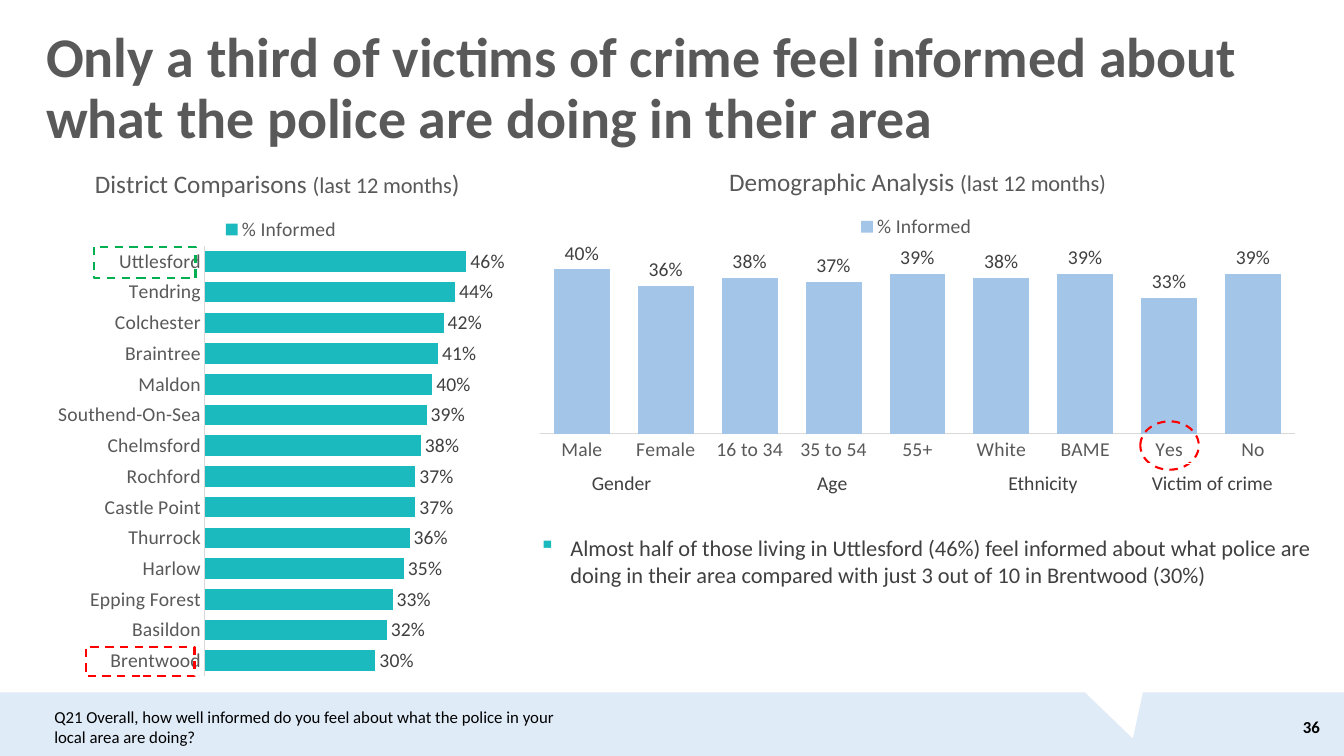
"""Build the slide on how informed residents feel about local policing."""
from lxml.etree import SubElement
from pptx import Presentation
from pptx.chart.data import CategoryChartData
from pptx.dml.color import RGBColor
from pptx.enum.chart import XL_CHART_TYPE, XL_LABEL_POSITION, XL_LEGEND_POSITION, XL_TICK_MARK
from pptx.enum.dml import MSO_LINE
from pptx.enum.shapes import MSO_SHAPE
from pptx.enum.text import MSO_ANCHOR, PP_ALIGN
from pptx.oxml import parse_xml
from pptx.oxml.ns import nsdecls, qn
from pptx.util import Inches, Pt

TITLE = "Only a third of victims of crime feel informed about what the police are doing in their area"
FINDING = ("Almost half of those living in Uttlesford (46%) feel informed about what police are "
           "doing in their area compared with just 3 out of 10 in Brentwood (30%)")
QUESTION = "Q21 Overall, how well informed do you feel about what the police in your local area are doing?"
PAGE = "36"
SERIES = "% Informed"

DEMOGRAPHIC = {
    "title": [("Demographic Analysis ", 18), ("(last 12 months)", 16)],
    "data": [("Male", 0.40), ("Female", 0.36), ("16 to 34", 0.38), ("35 to 54", 0.37), ("55+", 0.39),
             ("White", 0.38), ("BAME", 0.39), ("Yes", 0.33), ("No", 0.39)],
    "type": XL_CHART_TYPE.COLUMN_CLUSTERED, "box": (5.2, 1.49, 7.8, 3.16), "color": "columns",
    "max": 0.45, "overlap": -27, "reverse": False,
    "plot": (0.02, 0.31, 0.96, 0.58), "legend": (0.42, 0.19),
}
DISTRICT = {
    "title": [("District Comparisons ", 18), ("(last 12 months", 16), (")", 18)],
    "data": [("Uttlesford", 0.46), ("Tendring", 0.44), ("Colchester", 0.42), ("Braintree", 0.41),
             ("Maldon", 0.40), ("Southend-On-Sea", 0.39), ("Chelmsford", 0.38), ("Rochford", 0.37),
             ("Castle Point", 0.37), ("Thurrock", 0.36), ("Harlow", 0.35), ("Epping Forest", 0.33),
             ("Basildon", 0.32), ("Brentwood", 0.30)],
    "type": XL_CHART_TYPE.BAR_CLUSTERED, "box": (0.36, 1.47, 4.78, 5.4), "color": "accent",
    "max": 0.5, "overlap": 0, "reverse": True,
    "plot": (0.35, 0.18, 0.59, 0.79), "legend": (0.38, 0.12),
}
GROUPS = [("Gender", 1.69), ("Age", 2.49), ("Ethnicity", 1.69), ("Victim of crime", 1.67)]
HIGHLIGHTS = [
    (MSO_SHAPE.RECTANGLE, (0.93, 2.45, 1.01, 0.31), "good"),
    (MSO_SHAPE.RECTANGLE, (0.85, 6.42, 1.08, 0.29), "bad"),
    (MSO_SHAPE.OVAL, (11.31, 4.18, 0.58, 0.48), "bad"),
]
THEME = {
    "font": "Calibri",
    "colors": {"heading": "595959", "body": "404040", "black": "000000", "white": "FFFFFF",
               "band": "DFEBF7", "accent": "1BBABF", "columns": "A2C5E8", "axis": "D9D9D9",
               "good": "00B050", "bad": "FF0000"},
    "sizes": {"title": 40, "body": 16, "chart": 14, "small": 12},
}


def rgb(name):
    return RGBColor.from_string(THEME["colors"][name])


def inches(box):
    return [Inches(v) for v in box]


def style(font, size, color, bold=False):
    font.name, font.size, font.bold = THEME["font"], Pt(size), bold
    font.color.rgb = rgb(color)


def add_run(p, text, size, color, bold=False):
    r = p.add_run()
    r.text = text
    style(r.font, size, color, bold)


def add_text(slide, box, text, size, color, bold=False, anchor=MSO_ANCHOR.TOP):
    tf = slide.shapes.add_textbox(*inches(box)).text_frame
    tf.word_wrap, tf.vertical_anchor = True, anchor
    p = tf.paragraphs[0]
    add_run(p, text, THEME["sizes"][size], color, bold)
    return p


def add_shape(slide, kind, box, fill=None, line=None):
    sp = slide.shapes.add_shape(kind, *inches(box))
    sp.shadow.inherit = False
    if fill:
        sp.fill.solid()
        sp.fill.fore_color.rgb = rgb(fill)
    else:
        sp.fill.background()
    if line:
        sp.line.color.rgb, sp.line.width = rgb(line), Pt(1.5)
        sp.line.dash_style = MSO_LINE.DASH
    else:
        sp.line.fill.background()
    return sp


def set_layout(parent, index, values, inner=False):
    for old in parent.findall(qn("c:layout")):
        parent.remove(old)
    layout = parse_xml(f"<c:layout {nsdecls('c')}><c:manualLayout/></c:layout>")
    parts = [("layoutTarget", "inner")] if inner else []
    parts += [("xMode", "edge"), ("yMode", "edge"), *zip("xywh", values)]
    for tag, value in parts:
        SubElement(layout[0], qn(f"c:{tag}")).set("val", str(value))
    parent.insert(index, layout)


def add_chart(slide, info):
    size = THEME["sizes"]["chart"]
    data = CategoryChartData(number_format="0%")
    data.categories = [name for name, _ in info["data"]]
    data.add_series(SERIES, [value for _, value in info["data"]])
    chart = slide.shapes.add_chart(info["type"], *inches(info["box"]), data).chart
    style(chart.font, size, "black")

    chart.has_title = True
    p = chart.chart_title.text_frame.paragraphs[0]
    for text, pts in info["title"]:
        add_run(p, text, pts, "heading")

    chart.has_legend = True
    legend = chart.legend
    legend.position, legend.include_in_layout = XL_LEGEND_POSITION.TOP, False
    style(legend.font, size, "heading")
    set_layout(legend._element, 1, info["legend"])

    cat, val = chart.category_axis, chart.value_axis
    cat.major_tick_mark = cat.minor_tick_mark = XL_TICK_MARK.NONE
    cat.has_major_gridlines = val.has_major_gridlines = False
    cat.reverse_order = info["reverse"]
    cat.format.line.color.rgb, cat.format.line.width = rgb("axis"), Pt(0.75)
    style(cat.tick_labels.font, size, "heading")
    val.minimum_scale, val.maximum_scale, val.visible = 0, info["max"], False

    plot = chart.plots[0]
    plot.gap_width, plot.overlap, plot.vary_by_categories = 50, info["overlap"], False
    fill = plot.series[0].format.fill
    fill.solid()
    fill.fore_color.rgb = rgb(info["color"])
    plot.has_data_labels = True
    labels = plot.data_labels
    labels.show_value, labels.position = True, XL_LABEL_POSITION.OUTSIDE_END
    labels.number_format, labels.number_format_is_linked = "0%", False
    style(labels.font, size, "body")
    set_layout(chart._chartSpace.chart.plotArea, 0, info["plot"], inner=True)


def add_groups(slide):
    width = sum(w for _, w in GROUPS)
    table = slide.shapes.add_table(1, len(GROUPS), *inches((5.32, 4.6, width, 0.39))).table
    table.first_row = table.horz_banding = False
    for i, (name, w) in enumerate(GROUPS):
        table.columns[i].width = Inches(w)
        cell = table.cell(0, i)
        cell.fill.background()
        cell.vertical_anchor = MSO_ANCHOR.MIDDLE
        p = cell.text_frame.paragraphs[0]
        p.alignment = PP_ALIGN.CENTER
        add_run(p, name, THEME["sizes"]["chart"], "body")


def add_bullet(p):
    pPr = p._p.get_or_add_pPr()
    pPr.set("marL", str(Inches(0.31)))
    pPr.set("indent", str(-Inches(0.31)))
    color = SubElement(pPr, qn("a:buClr"))
    SubElement(color, qn("a:srgbClr")).set("val", THEME["colors"]["accent"])
    SubElement(pPr, qn("a:buChar")).set("char", "▪")


def main():
    prs = Presentation()
    prs.slide_width, prs.slide_height = Inches(13.33), Inches(7.5)
    slide = prs.slides.add_slide(prs.slide_layouts[6])
    add_shape(slide, MSO_SHAPE.RECTANGLE, (0, 6.87, 13.33, 0.63), fill="band")
    notch = add_shape(slide, MSO_SHAPE.ISOSCELES_TRIANGLE, (10.75, 6.65, 0.77, 0.69), fill="white")
    notch.rotation = 163.1
    for info in (DEMOGRAPHIC, DISTRICT):
        add_chart(slide, info)
    page = add_text(slide, (12.62, 7.01, 0.57, 0.4), PAGE, "small", "black", True, MSO_ANCHOR.MIDDLE)
    page.alignment = PP_ALIGN.RIGHT
    title = add_text(slide, (0.36, 0.12, 12.63, 1.54), TITLE, "title", "heading", True, MSO_ANCHOR.MIDDLE)
    title.line_spacing = 0.9
    add_bullet(add_text(slide, (5.25, 5.25, 7.94, 0.64), FINDING, "body", "body"))
    for kind, box, color in HIGHLIGHTS:
        add_shape(slide, kind, box, line=color)
    add_groups(slide)
    add_text(slide, (0.44, 6.96, 5.16, 0.5), QUESTION, "small", "black")
    prs.save("out.pptx")


if __name__ == "__main__":
    main()
